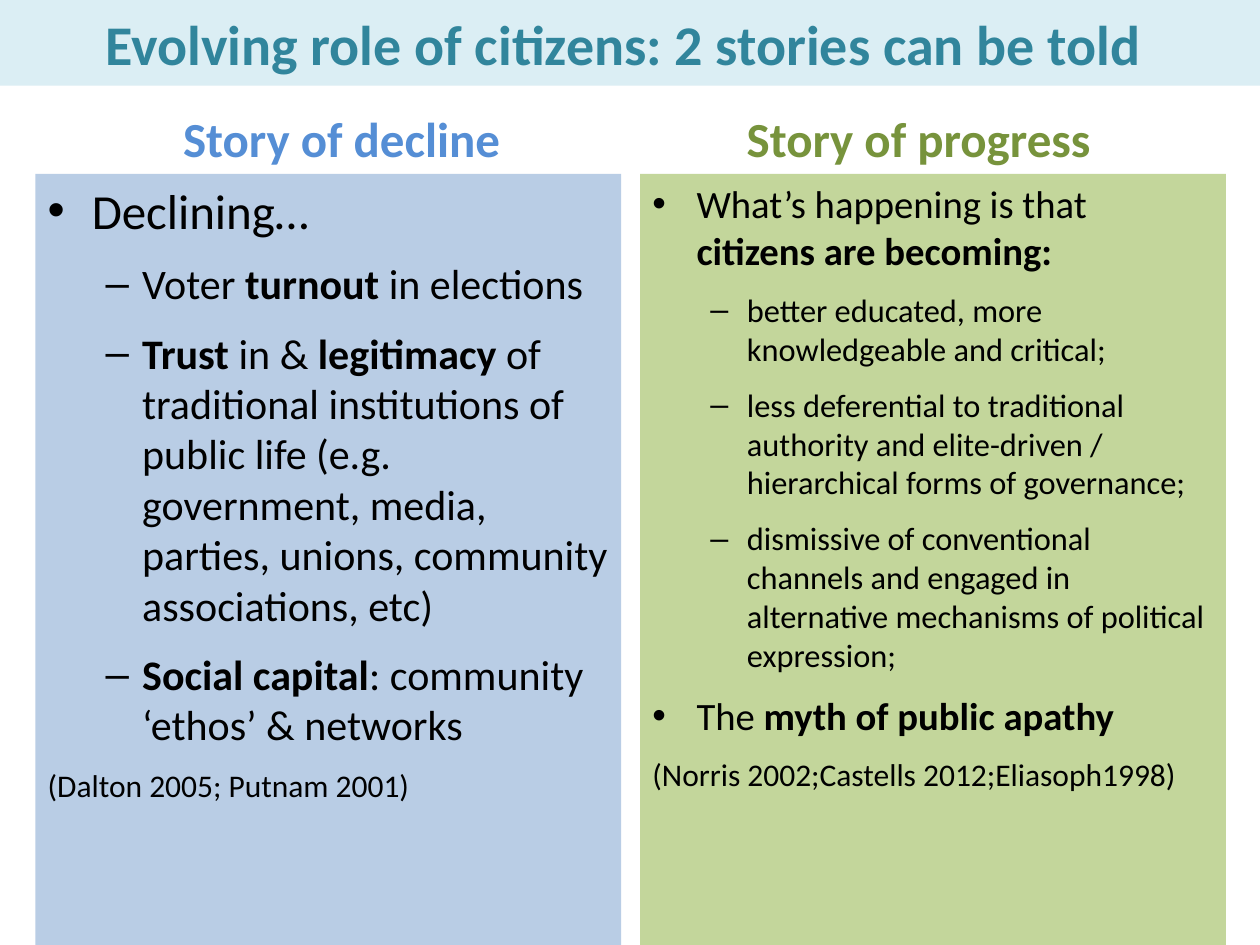
from dataclasses import dataclass

from lxml import etree
from pptx import Presentation
from pptx import util as u
from pptx.dml.color import RGBColor
from pptx.enum import shapes, text
from pptx.oxml.ns import qn


@dataclass(frozen=True)
class Theme:
    font: str = "Calibri"
    ink: str = "000000"
    teal: str = "31859C"
    pale: str = "DBEEF4"
    blue: str = "558ED5"
    sky: str = "B9CDE5"
    green: str = "77933C"
    lime: str = "C3D69B"
    title: float = 32
    head: float = 28
    cite: float = 18
    left: tuple = (28, 24)
    right: tuple = (22.1, 18.5)


# Bullet, left margin and hanging indent of each kind of paragraph
MARKS = {"main": ("•", 0.35, -0.35), "sub": ("–", 0.75, -0.29)}


class Deck:
    def __init__(self, theme):
        self.theme = theme
        self.prs = Presentation()
        self.prs.slide_width = u.Inches(10)
        self.prs.slide_height = u.Inches(7.5)
        self.slide = self.prs.slides.add_slide(self.prs.slide_layouts[6])

    def panel(self, box, fill):
        shape = self.slide.shapes.add_shape(
            shapes.MSO_SHAPE.RECTANGLE, *map(u.Inches, box))
        shape.shadow.inherit = False
        shape.fill.solid()
        shape.fill.fore_color.rgb = RGBColor.from_string(fill)
        shape.line.fill.background()
        return self.frame(shape, text.MSO_ANCHOR.TOP)

    def frame(self, shape, anchor):
        frame = shape.text_frame
        frame.word_wrap = True
        frame.vertical_anchor = anchor
        return frame

    def run(self, para, words, size, color, bold=False):
        run = para.add_run()
        run.text = words
        font = run.font
        font.name, font.size, font.bold = self.theme.font, u.Pt(size), bold
        font.color.rgb = RGBColor.from_string(color)

    def title(self, box, words):
        frame = self.panel(box, self.theme.pale)
        frame.vertical_anchor = text.MSO_ANCHOR.MIDDLE
        para = frame.paragraphs[0]
        para.alignment = text.PP_ALIGN.CENTER
        self.run(para, words, self.theme.title, self.theme.teal, True)

    def head(self, box, words, color):
        shape = self.slide.shapes.add_textbox(*map(u.Inches, box))
        para = self.frame(shape, text.MSO_ANCHOR.BOTTOM).paragraphs[0]
        para.alignment = text.PP_ALIGN.CENTER
        self.run(para, words, self.theme.head, color, True)

    def mark(self, para, kind):
        sign, margin, indent = MARKS[kind]
        props = para._p.get_or_add_pPr()
        props.set("marL", str(u.Inches(margin)))
        props.set("indent", str(u.Inches(indent)))
        etree.SubElement(props, qn("a:buFont"), typeface="Arial")
        etree.SubElement(props, qn("a:buChar"), char=sign)

    def body(self, box, fill, sizes, items):
        """Each item is a kind and its runs; a run in a tuple is bold."""
        frame = self.panel(box, fill)
        scale = dict(zip(("main", "sub"), sizes), cite=self.theme.cite)
        for i, (kind, *runs) in enumerate(items):
            para = frame.add_paragraph() if i else frame.paragraphs[0]
            para.alignment = text.PP_ALIGN.LEFT
            size = scale[kind]
            if kind in MARKS:
                self.mark(para, kind)
            para.level = int(kind == "sub")
            para.space_before = u.Pt(round(0.2 * size, 1) if i else 0)
            para.space_after = u.Pt(6)
            for run in runs:
                bold = isinstance(run, tuple)
                self.run(para, run[0] if bold else run, size,
                         self.theme.ink, bold)


DECLINE = [
    ("main", "Declining…"),
    ("sub", "Voter ", ("turnout",), " in elections"),
    ("sub", ("Trust",), " in & ", ("legitimacy",),
     " of traditional institutions of public life (e.g. government, media, "
     "parties, unions, community associations, etc)"),
    ("sub", ("Social capital",), ": community ‘ethos’ & networks"),
    ("cite", "(Dalton 2005; Putnam 2001)"),
]
PROGRESS = [
    ("main", "What’s happening is that ", ("citizens are becoming:",)),
    ("sub", "better educated, more knowledgeable and critical;"),
    ("sub", "less deferential to traditional authority and elite-driven / "
            "hierarchical forms of governance;"),
    ("sub", "dismissive of conventional channels and engaged in alternative "
            "mechanisms of political expression;"),
    ("main", "The ", ("myth of public apathy",)),
    ("cite", "(Norris 2002;Castells 2012;Eliasoph1998)"),
]


def main():
    theme = Theme()
    deck = Deck(theme)

    # Title band
    deck.title((0, 0, 10, 0.68), "Evolving role of citizens: 2 stories can be told ")

    # Two stories: heading above a filled panel
    stories = [
        (0.5, 0.28, "Story of decline", theme.blue, theme.sky, theme.left, DECLINE),
        (5.08, 5.08, "Story of progress", theme.green, theme.lime, theme.right, PROGRESS),
    ]
    for x, edge, words, color, fill, sizes, items in stories:
        deck.head((x, 0.68, 4.42, 0.7), words, color)
        deck.body((edge, 1.38, 4.65, 6.12), fill, sizes, items)

    deck.prs.save("out.pptx")


if __name__ == "__main__":
    main()
